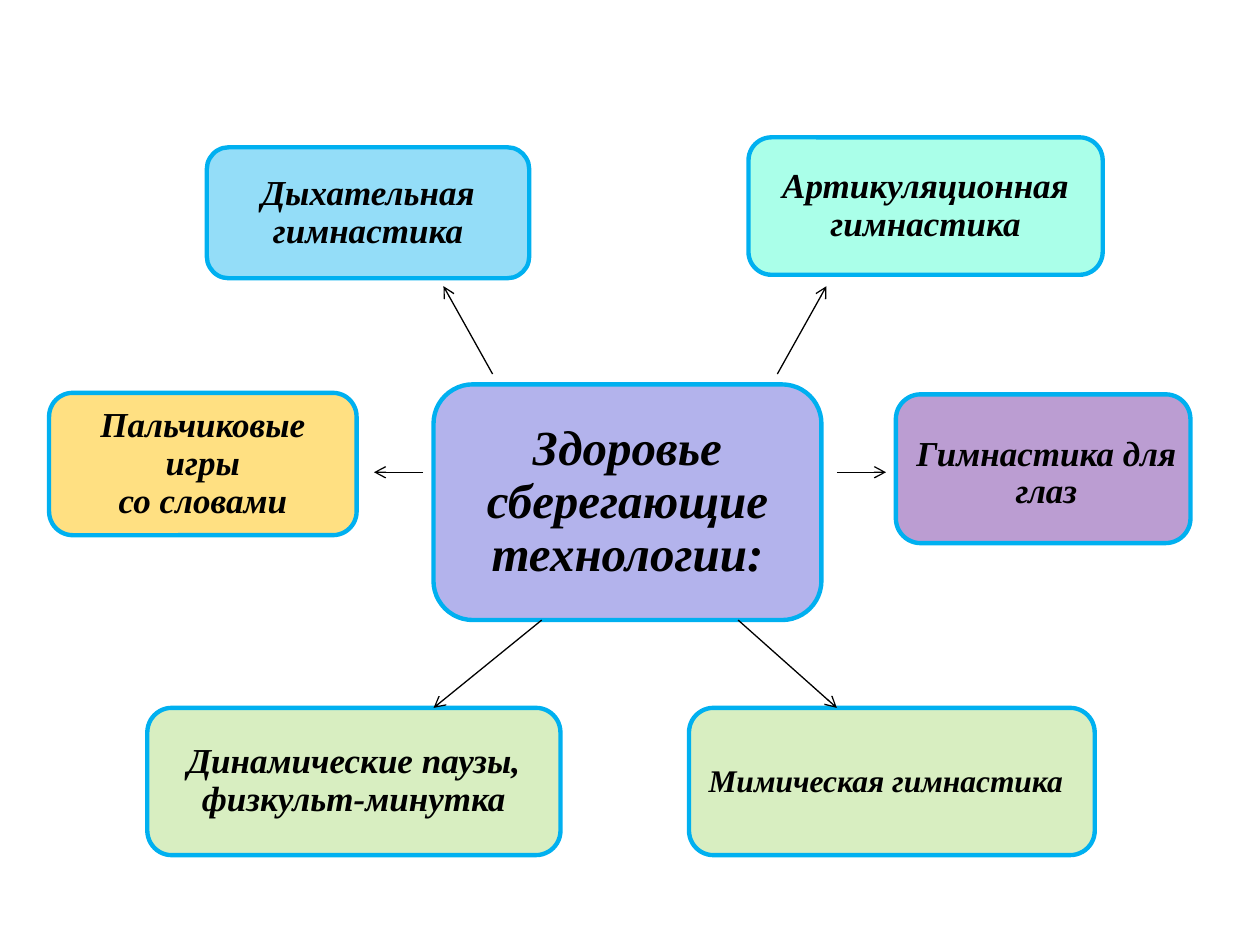
import dataclasses

import lxml.etree
import pptx
import pptx.dml.color
import pptx.enum.shapes
import pptx.enum.text
import pptx.oxml.ns
import pptx.util

Cm = pptx.util.Cm
Pt = pptx.util.Pt
ALIGN = pptx.enum.text.PP_ALIGN


@dataclasses.dataclass(frozen=True)
class Theme:
    font: str = "Times New Roman"
    text: str = "000000"
    border: str = "00B0F0"
    violet: str = "3333CC"
    mint: str = "47FFD1"
    purple: str = "7030A0"
    green: str = "92D050"
    blue: str = "00B0F0"
    amber: str = "FFC000"
    center_size: int = 28
    card_size: int = 20
    small_size: int = 18
    border_width: float = 2.5
    arrow_width: float = 0.75


THEME = Theme()
CARD_MARGINS = (0.1, 0.1, 0.1, 0.1)

CARDS = [
    ("Артикуляционная гимнастика", (15.09, 2.77, 7.14, 2.77), THEME.mint, 46, {}),
    ("Гимнастика для глаз", (18.06, 7.95, 5.94, 3), THEME.purple, 47,
     {"margins": (0.13, 0.2, 0, 0)}),
    ("Динамические паузы, физкульт-минутка", (2.97, 14.27, 8.33, 2.97),
     THEME.green, 35, {}),
    ("Дыхательная гимнастика", (4.17, 2.97, 6.5, 2.64), THEME.blue, 42, {}),
    ("Пальчиковые игры\nсо словами", (0.99, 7.92, 6.2, 2.87), THEME.amber, 49, {}),
    ("Мимическая гимнастика", (13.89, 14.27, 8.18, 2.97), THEME.green, 35,
     {"size": THEME.small_size, "alignment": ALIGN.LEFT, "spacing": 0.93,
      "margins": (0.25, 0.13, 0.25, 0.13)}),
]

ARROWS = [
    ((9.93, 7.54), (8.94, 5.77)),
    ((15.67, 7.54), (16.66, 5.77)),
    ((16.87, 9.52), (17.86, 9.52)),
    ((8.53, 9.52), (7.54, 9.52)),
    ((10.92, 12.5), (8.74, 14.27)),
    ((14.88, 12.5), (16.87, 14.27)),
]


def rgb(value):
    return pptx.dml.color.RGBColor.from_string(value)


def add_child(parent, tag, **attributes):
    return lxml.etree.SubElement(parent, pptx.oxml.ns.qn(tag), **attributes)


def fill_translucent(shape, color, opacity):
    shape.fill.solid()
    shape.fill.fore_color.rgb = rgb(color)
    color_element = shape.fill._xPr.find(".//" + pptx.oxml.ns.qn("a:srgbClr"))
    add_child(color_element, "a:alpha", val=str(opacity * 1000))


def write_text(shape, text, size, alignment, spacing, margins):
    frame = shape.text_frame
    frame.word_wrap = True
    frame.vertical_anchor = pptx.enum.text.MSO_ANCHOR.MIDDLE
    (frame.margin_left, frame.margin_top,
     frame.margin_right, frame.margin_bottom) = map(Cm, margins)
    frame.text = text
    for paragraph in frame.paragraphs:
        paragraph.alignment = alignment
        paragraph.line_spacing = spacing
        for run in paragraph.runs:
            run.font.name = THEME.font
            run.font.size = Pt(size)
            run.font.bold = True
            run.font.italic = True
            run.font.color.rgb = rgb(THEME.text)


def add_card(slide, text, box, color, opacity, size=THEME.card_size,
             alignment=ALIGN.CENTER, spacing=0.9, margins=CARD_MARGINS):
    shape = slide.shapes.add_shape(
        pptx.enum.shapes.MSO_SHAPE.ROUNDED_RECTANGLE, *map(Cm, box))
    shape.shadow.inherit = False
    fill_translucent(shape, color, opacity)
    shape.line.color.rgb = rgb(THEME.border)
    shape.line.width = Pt(THEME.border_width)
    write_text(shape, text, size, alignment, spacing, margins)


def add_arrow(slide, start, end):
    arrow = slide.shapes.add_connector(
        pptx.enum.shapes.MSO_CONNECTOR.STRAIGHT, *map(Cm, start + end))
    arrow.line.color.rgb = rgb(THEME.text)
    arrow.line.width = Pt(THEME.arrow_width)
    add_child(arrow.line._get_or_add_ln(), "a:tailEnd", type="arrow")
    add_child(arrow._element.spPr, "a:effectLst")


def main():
    presentation = pptx.Presentation()
    presentation.slide_width = Cm(25.4)
    presentation.slide_height = Cm(19.05)
    slide = presentation.slides.add_slide(presentation.slide_layouts[6])
    add_card(slide, "Здоровье сберегающие технологии:", (8.74, 7.75, 7.82, 4.75),
             THEME.violet, 37, size=THEME.center_size)
    for text, box, color, opacity, options in CARDS:
        add_card(slide, text, box, color, opacity, **options)
    for start, end in ARROWS:
        add_arrow(slide, start, end)
    presentation.save("out.pptx")


if __name__ == "__main__":
    main()
